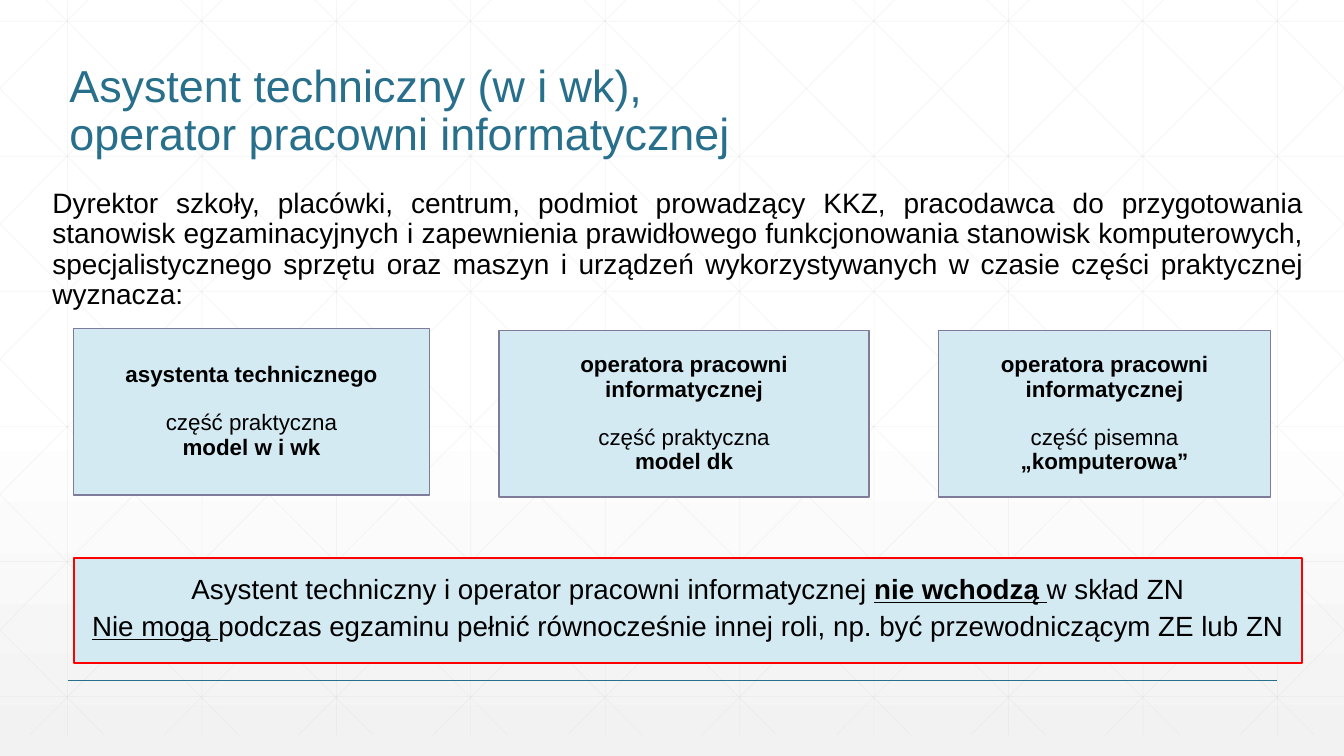
from lxml import etree
from pptx import Presentation
from pptx.dml.color import RGBColor
from pptx.enum.shapes import MSO_CONNECTOR, MSO_SHAPE
from pptx.enum.text import MSO_ANCHOR, PP_ALIGN
from pptx.oxml.ns import qn
from pptx.util import Pt

STRAIGHT = MSO_CONNECTOR.STRAIGHT
RECT = MSO_SHAPE.RECTANGLE
TOP, MIDDLE, BOTTOM = MSO_ANCHOR.TOP, MSO_ANCHOR.MIDDLE, MSO_ANCHOR.BOTTOM
LEFT, CENTER, JUSTIFY = PP_ALIGN.LEFT, PP_ALIGN.CENTER, PP_ALIGN.JUSTIFY

WHITE = RGBColor(0xFF, 0xFF, 0xFF)
BLACK = RGBColor(0x00, 0x00, 0x00)
PALE_GRAY = RGBColor(0xF2, 0xF2, 0xF2)
GRID_GRAY = RGBColor(0xD9, 0xD9, 0xD9)
TEAL = RGBColor(0x27, 0x6F, 0x8B)
PALE_BLUE = RGBColor(0xD4, 0xEA, 0xF3)
VIOLET = RGBColor(0x7F, 0x7B, 0x9A)
RED = RGBColor(0xFF, 0x00, 0x00)

EMU_PER_PX = 9144  # 100 px to the inch
WIDTH, HEIGHT = 1333, 750
GRID_TOP, GRID_BOTTOM = -21, 729
DIAGONAL_RUN = 745


def px(n):
    return round(n * EMU_PER_PX)


class SlideBuilder:
    font = "Arial"

    def __init__(self, slide):
        self.slide = slide

    def background(self):
        fill = self.slide.background.fill
        fill.gradient()
        fill.gradient_angle = 270
        for stop, position, color in zip(fill.gradient_stops, (0.53, 1), (WHITE, PALE_GRAY)):
            stop.position = position
            stop.color.rgb = color

    def line(self, x1, y1, x2, y2, color, width, opacity=100):
        s = self.slide.shapes.add_connector(STRAIGHT, px(x1), px(y1), px(x2), px(y2))
        s.line.color.rgb = color
        s.line.width = Pt(width)
        sp = s._element.spPr
        if opacity < 100:
            rgb = sp.find(".//" + qn("a:srgbClr"))
            etree.SubElement(rgb, qn("a:alpha")).set("val", str(opacity * 1000))
        etree.SubElement(sp, qn("a:effectLst"))

    def grid_line(self, x1, y1, x2, y2):
        self.line(x1, y1, x2, y2, GRID_GRAY, 0.5, 25)

    def diagonal(self, top_x):
        """Draw a falling grid line, cut at the slide edges, and its mirror image."""
        x1 = max(top_x, 0)
        x2 = min(top_x + DIAGONAL_RUN, WIDTH)
        y1, y2 = (GRID_TOP + (x - top_x) * (GRID_BOTTOM - GRID_TOP) / DIAGONAL_RUN
                  for x in (x1, x2))
        self.grid_line(x1, y1, x2, y2)
        self.grid_line(WIDTH - x1, y1, WIDTH - x2, y2)

    def grid(self):
        for i in range(10):
            x = 67 + i * 400 / 3
            self.grid_line(x, GRID_TOP, x, GRID_BOTTOM)
        for i in range(6):
            y = 21 + i * 134
            self.grid_line(0, y, WIDTH, y)
        for i in range(-5, 10):
            self.diagonal(25 + i * 400 / 3)

    def set_text(self, s, paragraphs, size, color=BLACK, align=LEFT, anchor=TOP,
                 spacing=0.9, gaps=None):
        """Fill s; a paragraph is a list of (text, style), style holding b and u flags.

        gaps maps a paragraph index to its space before in points.
        """
        tf = s.text_frame
        tf.word_wrap = True
        tf.vertical_anchor = anchor
        for i, runs in enumerate(paragraphs):
            p = tf.paragraphs[0] if i == 0 else tf.add_paragraph()
            p.alignment = align
            p.line_spacing = spacing
            if gaps and i in gaps:
                p.space_before = Pt(gaps[i])
            for text, style in runs:
                if text == "\v":
                    p.add_line_break()
                    continue
                r = p.add_run()
                r.text = text
                r.font.name = self.font
                r.font.size = Pt(size)
                r.font.color.rgb = color
                r.font.bold = "b" in style
                r.font.underline = "u" in style

    def text(self, x, y, w, h, paragraphs, size, **style):
        s = self.slide.shapes.add_textbox(px(x), px(y), px(w), px(h))
        self.set_text(s, paragraphs, size, **style)

    def box(self, x, y, w, h, paragraphs, size, border, border_width, inset=None, **style):
        s = self.slide.shapes.add_shape(RECT, px(x), px(y), px(w), px(h))
        s.shadow.inherit = False
        s.fill.solid()
        s.fill.fore_color.rgb = PALE_BLUE
        s.line.color.rgb = border
        s.line.width = Pt(border_width)
        if inset is not None:
            tf = s.text_frame
            tf.margin_left = tf.margin_right = tf.margin_top = tf.margin_bottom = px(inset)
        self.set_text(s, paragraphs, size, align=CENTER, anchor=MIDDLE, **style)


ROLES = [
    (73, 326, 353, "asystenta technicznego", "część praktyczna", "model w i wk"),
    (495, 328, 367, "operatora pracowni informatycznej", "część praktyczna", "model dk"),
    (931, 328, 329, "operatora pracowni informatycznej", "część pisemna", "„komputerowa”"),
]
TITLE = [("Asystent techniczny (w i wk),", ""), ("\v", ""),
         ("operator pracowni informatycznej", "")]
INTRO = (
    "Dyrektor szkoły, placówki, centrum, podmiot prowadzący KKZ, pracodawca do "
    "przygotowania stanowisk egzaminacyjnych i zapewnienia prawidłowego funkcjonowania "
    "stanowisk komputerowych, specjalistycznego sprzętu oraz maszyn i urządzeń "
    "wykorzystywanych w czasie części praktycznej wyznacza:"
)
RULES = [
    [("Asystent techniczny i operator pracowni informatycznej ", ""),
     ("nie wchodzą ", "bu"), ("w skład ZN", "")],
    [("Nie mogą ", "u"),
     ("podczas egzaminu pełnić równocześnie innej roli, np. być przewodniczącym ZE lub ZN", "")],
]


def main():
    prs = Presentation()
    prs.slide_width, prs.slide_height = px(WIDTH), px(HEIGHT)
    b = SlideBuilder(prs.slides.add_slide(prs.slide_layouts[6]))
    b.background()
    b.grid()
    b.line(67, 675, 1267, 675, TEAL, 1)
    b.text(59, 44, 1261, 120, [TITLE], 32, color=TEAL, anchor=BOTTOM)
    b.text(42, 183, 1261, 505, [[(INTRO, "")]], 20, align=JUSTIFY)
    for x, y, w, role, part, model in ROLES:
        b.box(x, y, w, 165, [[(role, "b")], [(part, "")], [(model, "b")]], 16,
              VIOLET, 1, inset=1, gaps={1: 17})
    b.box(73, 554, 1218, 104, RULES, 19.8, RED, 1.5, spacing=0.7, gaps={1: 10})
    prs.save("out.pptx")


if __name__ == "__main__":
    main()
